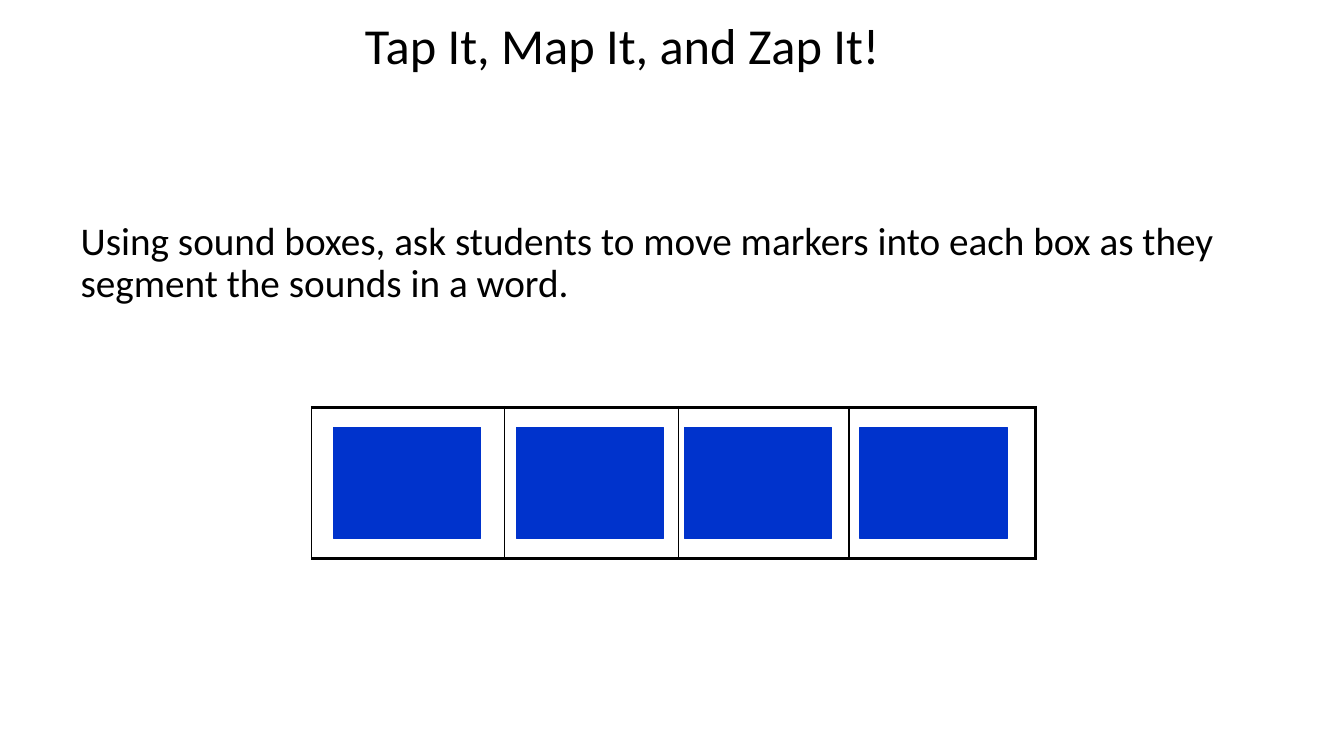
from lxml import etree
from pptx import Presentation
from pptx import util as u
from pptx.dml.color import RGBColor
from pptx.enum import shapes, text
from pptx.oxml.ns import qn

PX = 9144
BLACK = "000000"
BLUE = "0033CC"
COLUMNS = [191, 173, 169, 185]
MARKER_INSETS = [22, 12, 6, 11]


def px(n):
    return u.Emu(n * PX)


def color(value):
    return RGBColor.from_string(value)


def fill_placeholder(sp, box, words, size, indent=0, after=0):
    sp.left, sp.top, sp.width, sp.height = map(px, box)
    tf = sp.text_frame
    tf.text = words
    tf.word_wrap = True
    tf.auto_size = text.MSO_AUTO_SIZE.NONE
    tf.vertical_anchor = text.MSO_ANCHOR.TOP
    p = tf.paragraphs[0]
    p.alignment = text.PP_ALIGN.LEFT
    p.line_spacing = 0.9
    p.space_before = u.Pt(0)
    p.space_after = u.Pt(after)
    pPr = p._p.get_or_add_pPr()
    pPr.set("marL", str(px(indent)))
    pPr.set("indent", "0")
    etree.SubElement(pPr, qn("a:buNone"))
    r = p.runs[0]
    r.font.name = "Calibri"
    r.font.size = u.Pt(size)
    r.font.color.rgb = color(BLACK)


def set_borders(cell, **widths):
    tcPr = cell._tc.get_or_add_tcPr()
    for side, width in widths.items():
        ln = etree.SubElement(tcPr, qn("a:ln" + side), w=str(u.Pt(width)))
        solid = etree.SubElement(ln, qn("a:solidFill"))
        etree.SubElement(solid, qn("a:srgbClr"), val=BLACK)


def add_marker(slide, box):
    sp = slide.shapes.add_shape(shapes.MSO_SHAPE.RECTANGLE, *map(px, box))
    sp.shadow.inherit = False
    sp.fill.solid()
    sp.fill.fore_color.rgb = color(BLUE)
    sp.line.color.rgb = color(BLUE)
    sp.line.width = u.Pt(0.75)


def add_sound_boxes(slide, box):
    x, y, w, h = box
    frame = slide.shapes.add_table(1, len(COLUMNS), *map(px, box))
    table = frame.table
    table.first_row = False
    table.horz_banding = False
    table.rows[0].height = px(h)
    last = len(COLUMNS) - 1
    for i, width in enumerate(COLUMNS):
        table.columns[i].width = px(width)
        cell = table.cell(0, i)
        set_borders(cell, L=1, R=2.25 if i == last else 1, T=2.25, B=2.25)
        cell.fill.background()
    for i, inset in enumerate(MARKER_INSETS):
        add_marker(slide, (x + sum(COLUMNS[:i]) + inset, y + 20, 146, 110))


def main():
    prs = Presentation()
    prs.slide_width, prs.slide_height = px(1333), px(750)
    slide = prs.slides.add_slide(prs.slide_layouts[1])
    fill_placeholder(slide.shapes.title, (340, 16, 1002, 125),
                     "Tap It, Map It, and Zap It!", 36, indent=12)
    fill_placeholder(slide.placeholders[1], (70, 215, 1223, 420),
                     "Using sound boxes, ask students to move markers into "
                     "each box as they segment the sounds in a word.",
                     28, after=16)
    add_sound_boxes(slide, (309, 404, sum(COLUMNS), 150))
    prs.save("out.pptx")


if __name__ == "__main__":
    main()
